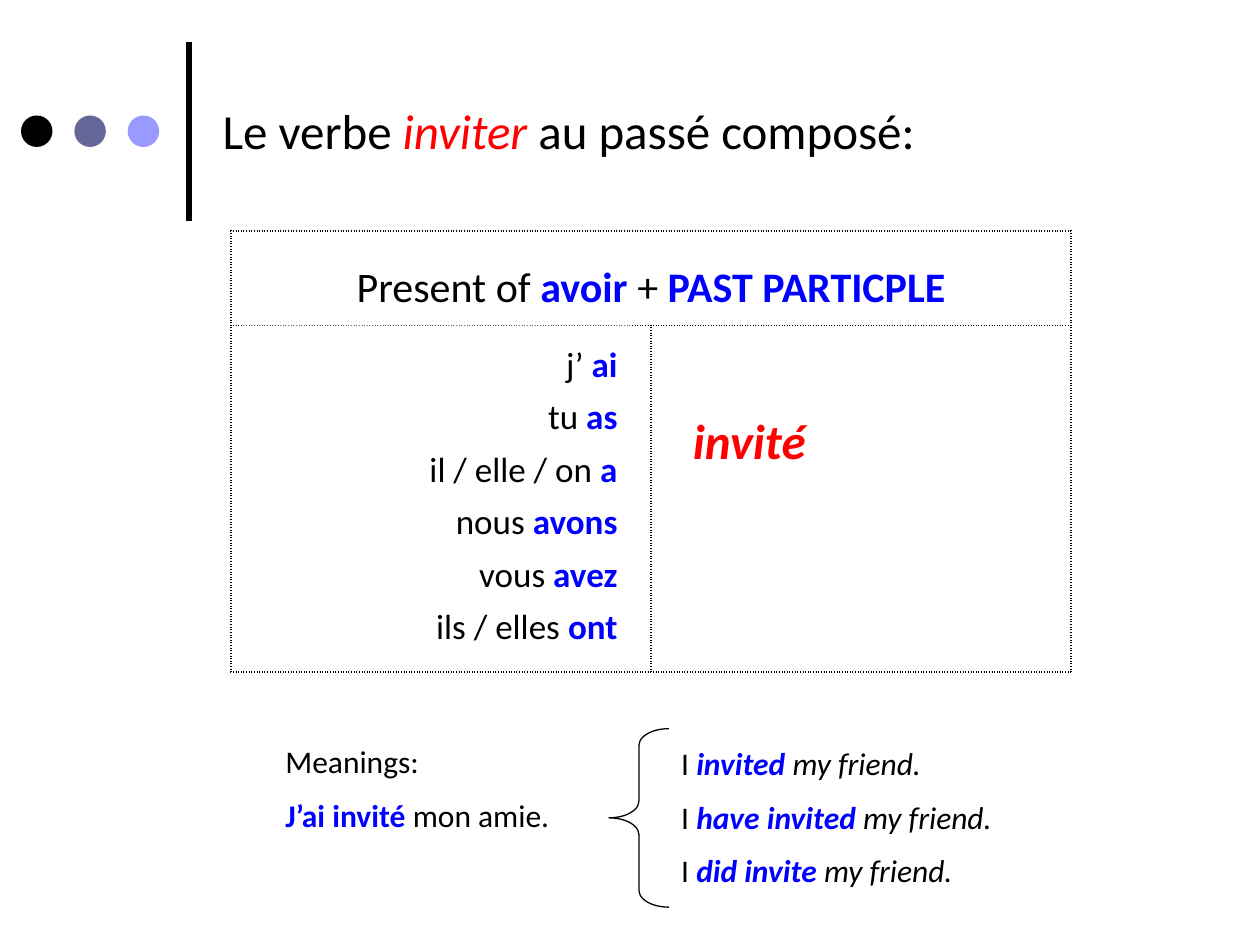
from dataclasses import dataclass
from lxml.etree import SubElement
from pptx import Presentation
from pptx.dml.color import RGBColor
from pptx.enum.shapes import MSO_CONNECTOR, MSO_SHAPE
from pptx.enum.text import MSO_ANCHOR, PP_ALIGN
from pptx.oxml.ns import qn
from pptx.util import Emu, Inches, Pt


@dataclass(frozen=True)
class Theme:
    font: str = "Calibri"
    ink: str = "000000"
    paper: str = "FFFFFF"
    accent: str = "0000FF"
    alert: str = "FF0000"
    dots: tuple = ("000000", "666699", "9999FF")
    title: int = 28
    heading: int = 24
    body: int = 20
    note: int = 18

    def tone(self, name):
        return {
            "plain": (self.ink, False, False),
            "slant": (self.ink, False, True),
            "key": (self.accent, True, False),
            "key slant": (self.accent, True, True),
            "verb": (self.alert, False, True),
            "answer": (self.alert, True, True),
        }[name]


class Page:
    COLS, ROWS = 120, 90

    def __init__(self, prs, theme):
        self.theme = theme
        self.col = prs.slide_width / self.COLS
        self.row = prs.slide_height / self.ROWS
        self.s = prs.slides.add_slide(prs.slide_layouts[5])

    def x(self, cols):
        return Emu(round(cols * self.col))

    def y(self, rows):
        return Emu(round(rows * self.row))

    def box(self, left, top, width, height):
        return self.x(left), self.y(top), self.x(width), self.y(height)

    def set_lines(self, tf, lines, size, align=PP_ALIGN.LEFT, before=0, spacing=1.0):
        tf.word_wrap = True
        for i, line in enumerate(lines):
            p = tf.paragraphs[0] if i == 0 else tf.add_paragraph()
            p.alignment, p.line_spacing = align, spacing
            p.space_before = Pt(before)
            for text, tone in line:
                r = p.add_run()
                r.text = text
                color, r.font.bold, r.font.italic = self.theme.tone(tone)
                r.font.name, r.font.size = self.theme.font, Pt(size)
                r.font.color.rgb = RGBColor.from_string(color)

    def title(self, box, line):
        sp = self.s.shapes.title
        sp.left, sp.top, sp.width, sp.height = self.box(*box)
        sp.text_frame.vertical_anchor = MSO_ANCHOR.TOP
        self.set_lines(sp.text_frame, [line], self.theme.title)

    def text(self, box, lines, size, **style):
        sp = self.s.shapes.add_textbox(*self.box(*box))
        self.set_lines(sp.text_frame, lines, size, **style)
        return sp

    def shape(self, kind, box, fill=None, line=None):
        sp = self.s.shapes.add_shape(kind, *self.box(*box))
        sp.shadow.inherit = False
        if fill:
            sp.fill.solid()
            sp.fill.fore_color.rgb = RGBColor.from_string(fill)
        else:
            sp.fill.background()
        if line:
            sp.line.color.rgb = RGBColor.from_string(line)
            sp.line.width = Pt(0.75)
        else:
            sp.line.fill.background()
        return sp

    def panel(self, box, lines, size, **style):
        sp = self.shape(MSO_SHAPE.RECTANGLE, box, fill=self.theme.paper)
        sp.text_frame.vertical_anchor = MSO_ANCHOR.TOP
        self.set_lines(sp.text_frame, lines, size, **style)

    def rule(self, x, top, bottom):
        c = self.s.shapes.add_connector(
            MSO_CONNECTOR.STRAIGHT, self.x(x), self.y(bottom), self.x(x), self.y(top))
        c.line.color.rgb = RGBColor.from_string(self.theme.ink)
        c.line.width = Pt(3)
        SubElement(c._element.spPr, qn("a:effectLst"))

    def table(self, box, row_heights, cols):
        sp = self.s.shapes.add_table(len(row_heights), cols, *self.box(*box))
        tbl = sp.table
        tbl.first_row = tbl.horz_banding = False
        for row, height in zip(tbl.rows, row_heights):
            row.height = self.y(height)
        for cell in tbl.iter_cells():
            self.border(cell)
            cell.fill.solid()
            cell.fill.fore_color.rgb = RGBColor.from_string(self.theme.paper)
        return tbl

    def border(self, cell):
        tcPr = cell._tc.get_or_add_tcPr()
        for side in ("lnL", "lnR", "lnT", "lnB"):
            ln = SubElement(tcPr, qn(f"a:{side}"), w=str(Pt(1)))
            fill = SubElement(ln, qn("a:solidFill"))
            SubElement(fill, qn("a:srgbClr"), val=self.theme.ink)
            SubElement(ln, qn("a:prstDash"), val="sysDot")


def main():
    prs = Presentation()
    prs.slide_width, prs.slide_height = Inches(10), Inches(7.5)
    theme = Theme()
    page = Page(prs, theme)

    page.rule(18, 4, 21)
    for i, color in enumerate(theme.dots):
        page.shape(MSO_SHAPE.OVAL, (2 + 5.08 * i, 11, 3, 3), fill=color)
    page.title((20, 9, 93, 6.8), [
        ("Le verbe ", "plain"), ("inviter", "verb"), (" au passé composé:", "plain")])

    tbl = page.table((22, 22, 80, 42), (9, 33), 2)
    head, answer = tbl.cell(0, 0), tbl.cell(1, 1)
    head.merge(tbl.cell(0, 1))
    page.set_lines(head.text_frame, [[
        ("Present of ", "plain"), ("avoir", "key"),
        (" + ", "plain"), ("PAST PARTICPLE", "key")]],
        theme.heading, align=PP_ALIGN.CENTER, before=12, spacing=1.5)
    answer.margin_left, answer.margin_top = page.x(4), page.y(8.3)
    page.set_lines(answer.text_frame, [[("invité", "answer")]], theme.title)

    forms = [("j’", "ai"), ("tu", "as"), ("il / elle / on", "a"),
             ("nous", "avons"), ("vous", "avez"), ("ils / elles", "ont")]
    page.panel((23, 31, 37, 31.1),
               [[(f"{subject} ", "plain"), (verb, "key")] for subject, verb in forms],
               theme.body, align=PP_ALIGN.RIGHT, spacing=1.25)

    page.text((26, 70.1, 32, 10.3), [
        [("Meanings:", "plain")],
        [("J’ai invité ", "key"), ("mon amie.", "plain")]], theme.note, before=9)

    meanings = page.text((63.7, 70.3, 52.3, 16), [
        [("I ", "plain"), (f"{verb} ", "key slant"), ("my friend.", "slant")]
        for verb in ("invited", "have invited", "did invite")], theme.note, before=9)
    brace = page.shape(MSO_SHAPE.LEFT_BRACE, (58, 69.4, 5.7, 17), line=theme.ink)
    brace.adjustments[0] = 0.28
    page.s.shapes.add_group_shape([meanings, brace])

    prs.save("out.pptx")


if __name__ == "__main__":
    main()
